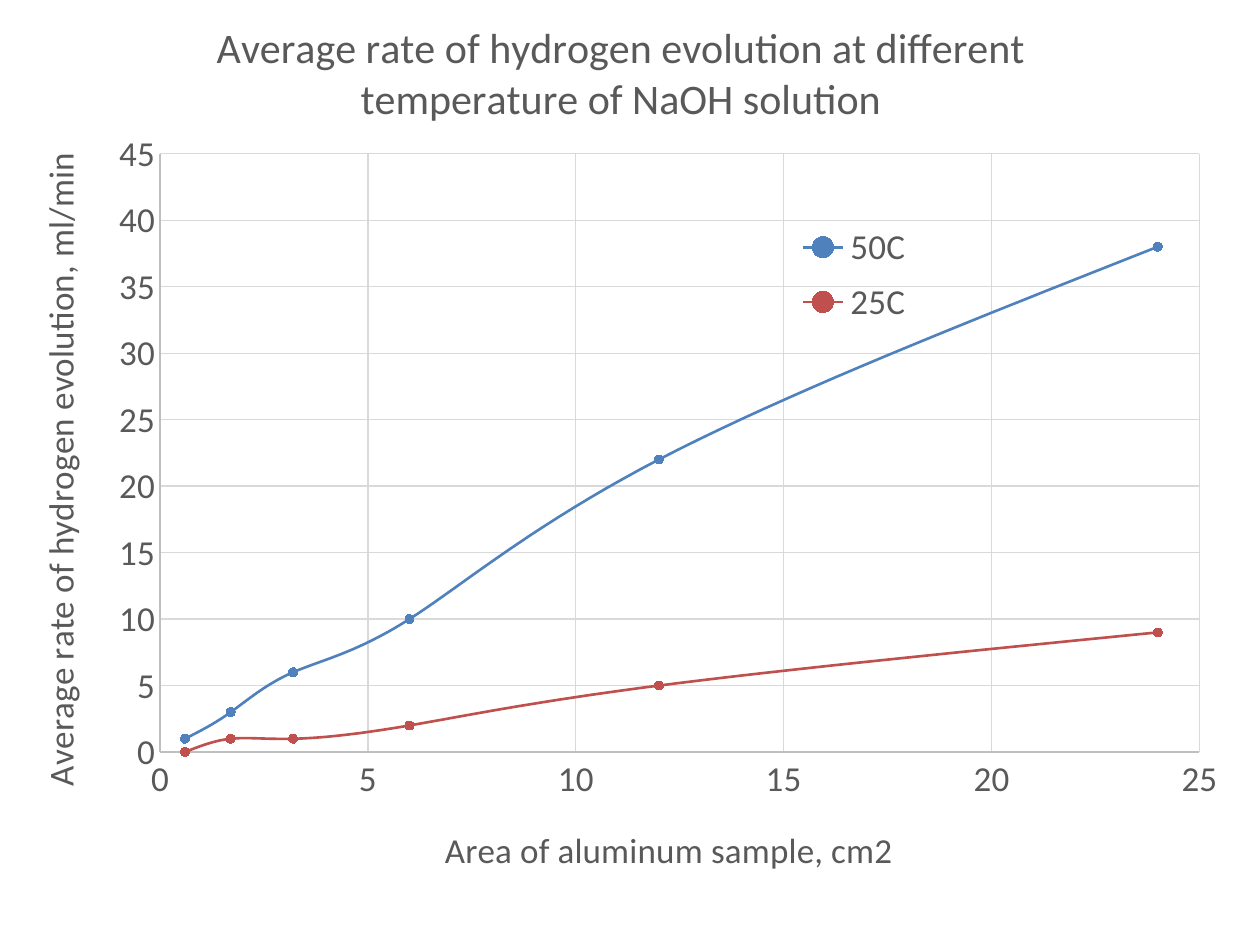
from dataclasses import dataclass

from lxml import etree
from pptx import Presentation
from pptx.chart.data import XyChartData
from pptx.dml.color import RGBColor
from pptx.enum.chart import (
    XL_CHART_TYPE, XL_LEGEND_POSITION, XL_MARKER_STYLE, XL_TICK_MARK)
from pptx.oxml.ns import qn
from pptx.util import Inches, Pt

SMOOTH = XL_CHART_TYPE.XY_SCATTER_SMOOTH
RIGHT = XL_LEGEND_POSITION.RIGHT
CIRCLE = XL_MARKER_STYLE.CIRCLE
NO_TICK = XL_TICK_MARK.NONE


@dataclass(frozen=True)
class Theme:
    font: str = "Calibri"
    text: str = "595959"
    axis: str = "BFBFBF"
    grid: str = "D9D9D9"
    series: tuple = ("4F81BD", "C0504D")
    head: int = 24
    body: int = 20
    hair: float = 0.75
    curve: float = 1.5
    dot: int = 5


THEME = Theme()

WIDE, HIGH = Inches(10), Inches(7.08)
AREAS = (0.6, 1.7, 3.2, 6, 12, 24)
RATES = {
    "50C": (1, 3, 6, 10, 22, 38),
    "25C": (0, 1, 1, 2, 5, 9),
}


def style_font(font, size=THEME.body):
    font.name = THEME.font
    font.size = Pt(size)
    font.bold = False
    font.color.rgb = RGBColor.from_string(THEME.text)


def style_line(line, color, width=THEME.hair):
    line.color.rgb = RGBColor.from_string(color)
    line.width = Pt(width)


def place(host, index, x, y, w=None, h=None, inner=False):
    """Give a chart part a manual layout, from lengths in inches."""
    for old in host.findall(qn("c:layout")):
        host.remove(old)
    parts = {"layoutTarget": "inner"} if inner else {}
    parts.update(xMode="edge", yMode="edge",
                 x=Inches(x) / WIDE, y=Inches(y) / HIGH)
    if w and h:
        parts.update(w=Inches(w) / WIDE, h=Inches(h) / HIGH)
    layout = etree.Element(qn("c:layout"))
    manual = etree.SubElement(layout, qn("c:manualLayout"))
    for name, value in parts.items():
        etree.SubElement(manual, qn(f"c:{name}")).set("val", str(value))
    host.insert(index, layout)


def add_title(owner, text, x, y, size=THEME.body, turn=None):
    """Title a chart or an axis, with its top left corner at x, y."""
    owner.has_title = True
    title = owner.chart_title if hasattr(owner, "chart_title") else owner.axis_title
    frame = title.text_frame
    frame.text = text
    style_font(frame.paragraphs[0].runs[0].font, size)
    if turn is not None:
        body = frame._txBody.find(qn("a:bodyPr"))
        body.set("rot", str(turn * 60000))
        body.set("vert", "horz")
    place(title._element, 1, x, y)


def style_axis(axis, top, step):
    axis.minimum_scale, axis.maximum_scale, axis.major_unit = 0, top, step
    axis.major_tick_mark = axis.minor_tick_mark = NO_TICK
    axis.has_major_gridlines = True
    style_line(axis.major_gridlines.format.line, THEME.grid)
    style_line(axis.format.line, THEME.axis)
    style_font(axis.tick_labels.font)


def smooth_curve(series):
    node = series._element
    flag = node.find(qn("c:smooth"))
    if flag is None:
        flag = etree.SubElement(node, qn("c:smooth"))
    flag.set("val", "1")


def style_series(series, color):
    smooth_curve(series)
    style_line(series.format.line, color, THEME.curve)
    mark = series.marker
    mark.style, mark.size = CIRCLE, THEME.dot
    mark.format.fill.solid()
    mark.format.fill.fore_color.rgb = RGBColor.from_string(color)
    style_line(mark.format.line, color)


def add_legend(chart):
    chart.has_legend = True
    legend = chart.legend
    legend.position = RIGHT
    legend.include_in_layout = False
    style_font(legend.font)
    place(legend._element, 1, 6.23, 1.7, 1.1, 0.96)


def add_plot(slide):
    data = XyChartData()
    for name, rates in RATES.items():
        series = data.add_series(name)
        for area, rate in zip(AREAS, rates):
            series.add_data_point(area, rate)
    chart = slide.shapes.add_chart(SMOOTH, 0, 0, WIDE, HIGH, data).chart
    style_font(chart.font)
    chart.plots[0].vary_by_categories = False
    for series, color in zip(chart.plots[0].series, THEME.series):
        style_series(series, color)
    area = chart._chartSpace.find(f".//{qn('c:plotArea')}")
    place(area, 0, 1.27, 1.22, 8.25, 4.75, inner=True)
    return chart


def main():
    deck = Presentation()
    deck.slide_width, deck.slide_height = Inches(10), Inches(7.5)
    chart = add_plot(deck.slides.add_slide(deck.slide_layouts[6]))
    across, up = chart.category_axis, chart.value_axis
    style_axis(across, top=25, step=5)
    style_axis(up, top=45, step=5)
    add_title(chart, "Average rate of hydrogen evolution at different "
              "temperature of NaOH solution", 1.66, 0.09, size=THEME.head)
    add_title(across, "Area of aluminum sample, cm2", 3.48, 6.5)
    add_title(up, "Average rate of hydrogen evolution, ml/min",
              0.23, 1.16, turn=-90)
    add_legend(chart)
    deck.save("out.pptx")


if __name__ == "__main__":
    main()
